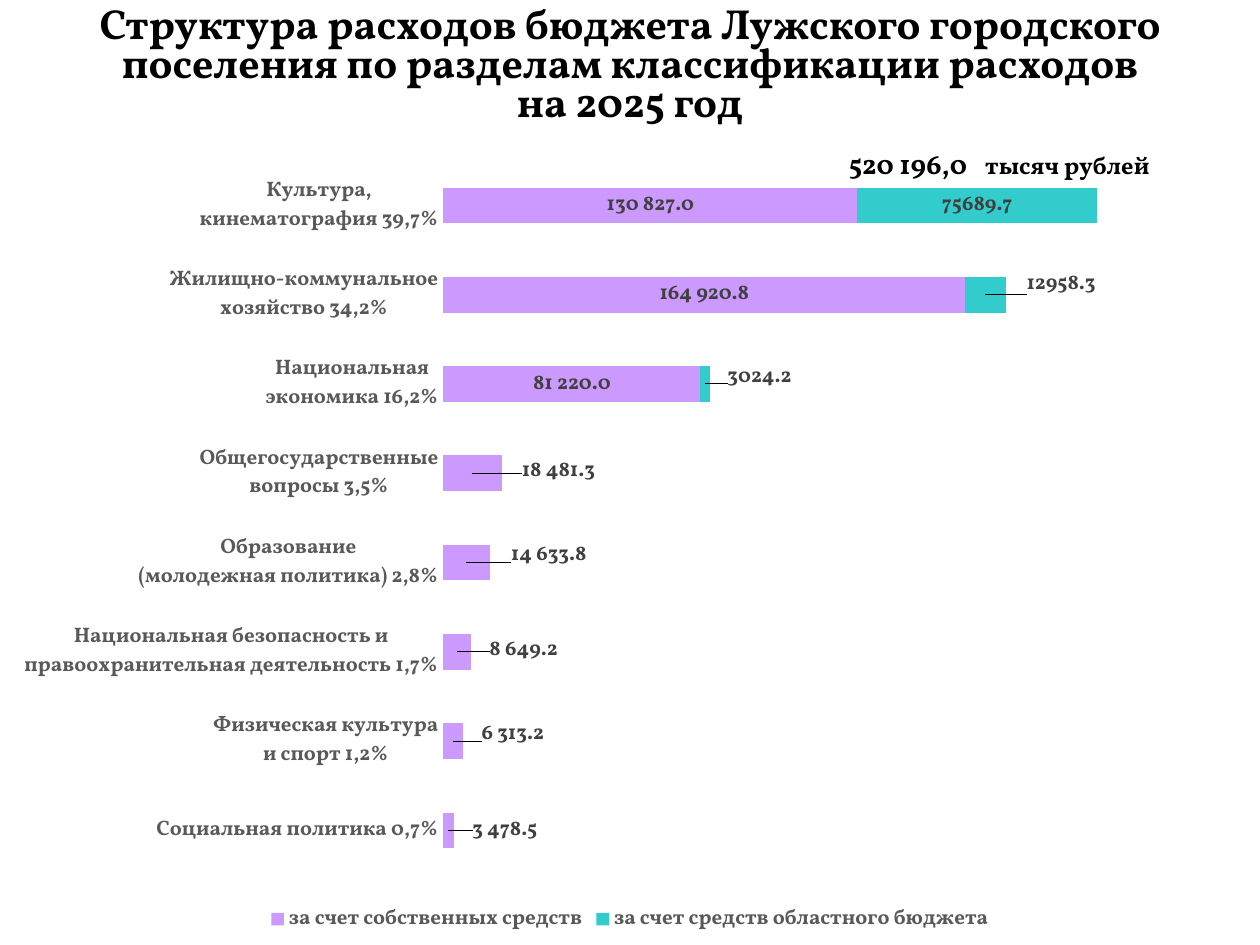
"""Build the slide on the 2025 budget expenditure structure."""
from dataclasses import dataclass, field
from typing import Any

import lxml.etree
import pptx
import pptx.chart.data
import pptx.dml.color
import pptx.enum.chart
import pptx.enum.text
import pptx.oxml.ns
import pptx.util

Pt = pptx.util.Pt
qn = pptx.oxml.ns.qn

COLORS = {"black": "000000", "axis": "595959", "label": "404040", "own": "CC99FF", "regional": "33CCCC"}
FONT = "Vollkorn"
CHART_WIDTH, CHART_HEIGHT = 720, 453.6
PLOT_AREA = {"x": 0.352, "y": 0.02, "w": 0.628, "h": 0.9}
AXIS_MAXIMUM = 250000


@dataclass(frozen=True)
class Caption:
    text: str
    left: float
    top: float
    width: float
    height: float
    size: float
    alignment: Any = pptx.enum.text.PP_ALIGN.LEFT
    spacing: float = 1.0


@dataclass(frozen=True)
class Funding:
    name: str
    color: str
    number_format: str
    values: list[float | None]
    label_shifts: dict[int, tuple[float, float]] = field(default_factory=dict)


CAPTIONS = [
    Caption(
        "Структура расходов бюджета Лужского городского поселения "
        "по разделам классификации расходов\vна 2025 год",
        0, 4.5, 720, 80, 24, pptx.enum.text.PP_ALIGN.CENTER, 0.78,
    ),
    Caption("520 196,0", 485, 84, 76, 23, 16),
    Caption("тысяч рублей", 563, 86, 110, 20, 14),
]

SECTIONS = [
    "Социальная политика 0,7%",
    "Физическая культура\nи спорт 1,2%",
    "Национальная безопасность и\nправоохранительная деятельность 1,7%",
    "Образование\n(молодежная политика) 2,8%",
    "Общегосударственные\nвопросы 3,5%",
    "Национальная\nэкономика 16,2%",
    "Жилищно-коммунальное\nхозяйство 34,2%",
    "Культура,\nкинематография 39,7%",
]

FUNDINGS = [
    Funding(
        "за счет собственных средств", "own", r"#\ ##0.0",
        [3478.5, 6313.2, 8649.2, 14633.8, 18481.3, 81220, 164920.8, 130827],
        {0: (32, 0), 1: (34, -4), 2: (38, -1), 3: (47, -4), 4: (49, -1)},
    ),
    Funding(
        "за счет средств областного бюджета", "regional", "General",
        [None] * 5 + [3024.2, 12958.3, 75689.7],
        {5: (31, -4), 6: (43, -6)},
    ),
]


def apply_format(target: Any, values: dict[str, Any]) -> None:
    """Set every attribute named in a dict of format values."""
    for name, value in values.items():
        setattr(target, name, value)


def style_font(font: Any, size: float, color: str) -> None:
    """Give a font the bold slide typeface, a size and a colour."""
    apply_format(font, {"name": FONT, "size": Pt(size), "bold": True})
    font.color.rgb = pptx.dml.color.RGBColor.from_string(COLORS[color])


def add_caption(slide: Any, caption: Caption) -> None:
    """Add one line or block of heading text."""
    frame = slide.shapes.add_textbox(
        Pt(caption.left), Pt(caption.top), Pt(caption.width), Pt(caption.height)
    ).text_frame
    margins = dict.fromkeys(("margin_left", "margin_top", "margin_right", "margin_bottom"), 0)
    apply_format(frame, {"word_wrap": True, "text": caption.text, **margins})
    paragraph = frame.paragraphs[0]
    apply_format(paragraph, {"alignment": caption.alignment, "line_spacing": caption.spacing})
    for run in paragraph.runs:
        style_font(run.font, caption.size, "black")


def make_layout(values: dict[str, Any]) -> Any:
    """Return a manual chart layout element."""
    layout = lxml.etree.Element(qn("c:layout"))
    manual = lxml.etree.SubElement(layout, qn("c:manualLayout"))
    for name, value in values.items():
        lxml.etree.SubElement(manual, qn(f"c:{name}"), val=str(value))
    return layout


def place_plot(chart: Any) -> None:
    """Fix the inner plot area inside the chart."""
    plot_area = chart.element.find(f".//{qn('c:plotArea')}")
    for layout in plot_area.findall(qn("c:layout")):
        plot_area.remove(layout)
    modes = {"layoutTarget": "inner", "xMode": "edge", "yMode": "edge"}
    plot_area.insert(0, make_layout({**modes, **PLOT_AREA}))


def style_series(series: Any, funding: Funding) -> None:
    """Colour a series and place its value labels."""
    series.format.fill.solid()
    series.format.fill.fore_color.rgb = pptx.dml.color.RGBColor.from_string(COLORS[funding.color])
    labels = series.data_labels
    apply_format(labels, {
        "show_value": True,
        "number_format": funding.number_format,
        "number_format_is_linked": False,
    })
    style_font(labels.font, 12, "label")
    for index in funding.label_shifts:
        style_font(series.points[index].data_label.font, 12, "label")
    for label in series.data_labels._element.findall(qn("c:dLbl")):
        marker = label.find(qn("c:idx"))
        right, down = funding.label_shifts[int(marker.get("val"))]
        number = lxml.etree.Element(
            qn("c:numFmt"), formatCode=funding.number_format, sourceLinked="0"
        )
        marker.addnext(number)
        marker.addnext(make_layout({
            "x": round(right / CHART_WIDTH, 4), "y": round(down / CHART_HEIGHT, 4),
        }))


def add_expenditure_chart(slide: Any) -> None:
    """Add the stacked bars of expenditure by section."""
    data = pptx.chart.data.CategoryChartData()
    data.categories = SECTIONS
    for funding in FUNDINGS:
        data.add_series(funding.name, funding.values, funding.number_format)
    chart = slide.shapes.add_chart(
        pptx.enum.chart.XL_CHART_TYPE.BAR_STACKED,
        Pt(0), Pt(82.8), Pt(CHART_WIDTH), Pt(CHART_HEIGHT), data,
    ).chart
    apply_format(chart, {"has_title": False, "has_legend": True})
    apply_format(chart.font, {"name": "Calibri", "size": Pt(10)})
    apply_format(chart.plots[0], {"gap_width": 150, "overlap": 100, "vary_by_categories": False})
    apply_format(chart.legend, {
        "position": pptx.enum.chart.XL_LEGEND_POSITION.BOTTOM,
        "include_in_layout": False,
    })
    style_font(chart.legend.font, 12, "axis")
    sections = chart.category_axis
    no_tick = pptx.enum.chart.XL_TICK_MARK.NONE
    apply_format(sections, {"major_tick_mark": no_tick, "minor_tick_mark": no_tick})
    sections.format.line.fill.background()
    style_font(sections.tick_labels.font, 12, "axis")
    apply_format(chart.value_axis, {
        "visible": False,
        "has_major_gridlines": False,
        "minimum_scale": 0,
        "maximum_scale": AXIS_MAXIMUM,
    })
    for series, funding in zip(chart.plots[0].series, FUNDINGS):
        style_series(series, funding)
    place_plot(chart)


def main() -> None:
    """Create and save the presentation."""
    presentation = pptx.Presentation()
    apply_format(presentation, {"slide_width": Pt(720), "slide_height": Pt(540)})
    slide = presentation.slides.add_slide(presentation.slide_layouts[6])
    add_expenditure_chart(slide)
    for caption in CAPTIONS:
        add_caption(slide, caption)
    presentation.save("out.pptx")


if __name__ == "__main__":
    main()
